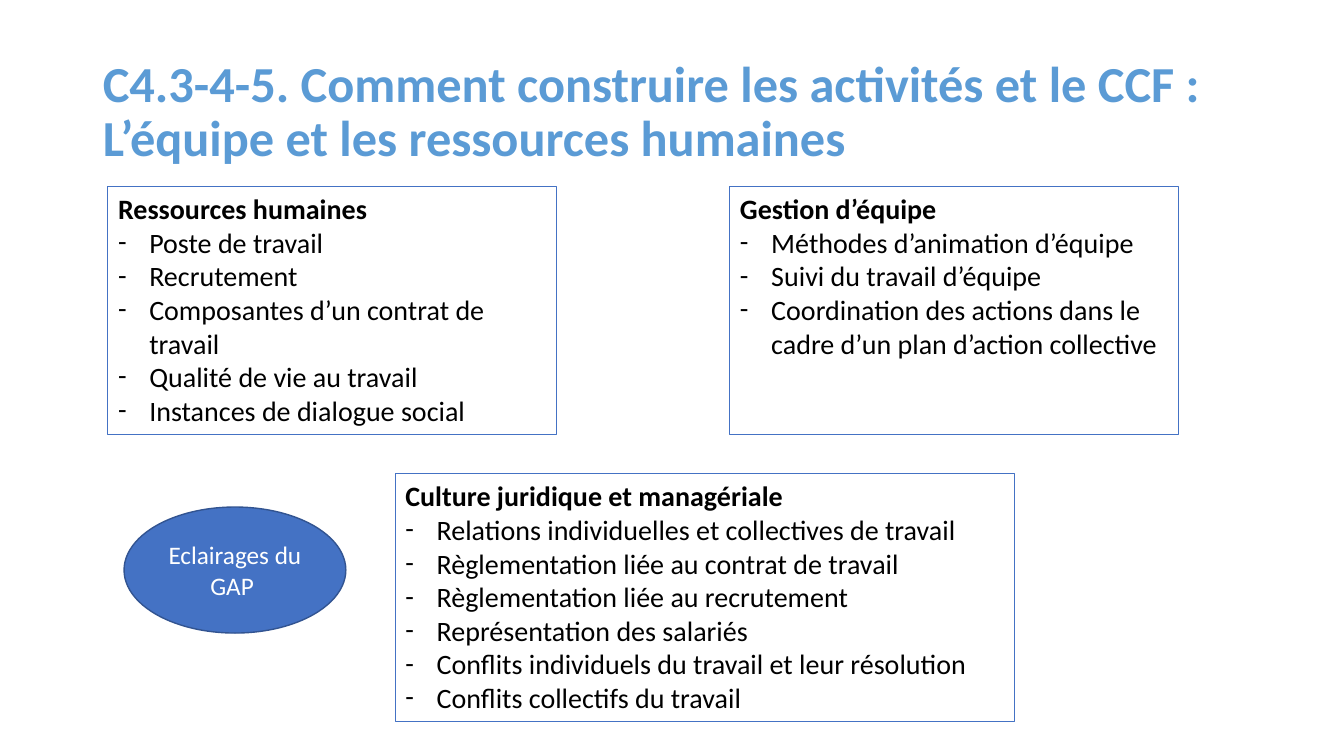
from typing import NamedTuple

import pptx
import pptx.dml.color
import pptx.enum.shapes
import pptx.enum.text
import pptx.oxml.xmlchemy
import pptx.util
from lxml import etree
from pptx.oxml import ns

WIDE = pptx.util.Inches(13.33)
HIGH = pptx.util.Inches(7.5)
FONT = "Calibri"
BLUE = "4472C4"
DASH = pptx.util.Inches(0.31)
ANCHOR = pptx.enum.text.MSO_ANCHOR
ALIGN = pptx.enum.text.PP_ALIGN
FIT = pptx.enum.text.MSO_AUTO_SIZE


class Area(NamedTuple):
    """Left, top, width and height in percent of the slide's size."""
    left: float
    top: float
    width: float
    height: float


class Card(NamedTuple):
    area: Area
    head: str
    items: tuple[str, ...]


UPPER, LOWER, TALL = 24.67, 62.67, 32.8
HALF = 33.38
CARDS = (
    Card(Area(8.03, UPPER, HALF, TALL), "Ressources humaines", (
        "Poste de travail",
        "Recrutement",
        "Composantes d’un contrat de travail",
        "Qualité de vie au travail",
        "Instances de dialogue social",
    )),
    Card(Area(54.31, UPPER, HALF, TALL), "Gestion d’équipe", (
        "Méthodes d’animation d’équipe",
        "Suivi du travail d’équipe",
        "Coordination des actions dans le cadre d’un plan d’action collective",
    )),
    Card(Area(29.41, LOWER, 46.06, TALL), "Culture juridique et managériale", (
        "Relations individuelles et collectives de travail",
        "Règlementation liée au contrat de travail",
        "Règlementation liée au recrutement",
        "Représentation des salariés",
        "Conflits individuels du travail et leur résolution",
        "Conflits collectifs du travail",
    )),
)


def paint(color, code: str) -> None:
    color.rgb = pptx.dml.color.RGBColor.from_string(code)


def scale(area: Area) -> tuple[int, int, int, int]:
    return (int(area.left * WIDE / 100), int(area.top * HIGH / 100),
            int(area.width * WIDE / 100), int(area.height * HIGH / 100))


def place(shape, area: Area) -> None:
    shape.left, shape.top, shape.width, shape.height = scale(area)


def style(para, size: int, code: str, bold: bool = False) -> None:
    para.font.name = FONT
    para.font.size = pptx.util.Pt(size)
    para.font.bold = bold
    paint(para.font.color, code)


def edge(shape, code: str, width: float) -> None:
    shape.line.width = pptx.util.Pt(width)
    paint(shape.line.color, code)


def mark(para, dash: bool) -> None:
    """Give the paragraph a hanging dash, or no bullet and no indent."""
    props = para._p.get_or_add_pPr()
    props.set("marL", str(DASH if dash else 0))
    props.set("indent", str(-DASH if dash else 0))
    if dash:
        etree.SubElement(props, ns.qn("a:buFont"), typeface=FONT)
        etree.SubElement(props, ns.qn("a:buChar"), char="-")
    else:
        etree.SubElement(props, ns.qn("a:buNone"))


def draw_title(title) -> None:
    place(title, Area(6.9, 5.33, 86.27, 19.33))
    frame = title.text_frame
    frame.text = ("C4.3-4-5. Comment construire les activités et le CCF : "
                  "L’équipe et les ressources humaines")
    frame.auto_size = FIT.NONE
    frame.vertical_anchor = ANCHOR.MIDDLE
    para = frame.paragraphs[0]
    para.alignment = ALIGN.LEFT
    para.line_spacing = 0.9
    style(para, 36, "5B9BD5", True)


def draw_card(body, card: Card) -> None:
    place(body, card.area)
    edge(body, BLUE, 0.75)
    frame = body.text_frame
    frame.text = "\n".join((card.head, *card.items))
    frame.auto_size = FIT.NONE
    frame.vertical_anchor = ANCHOR.TOP
    for row, para in enumerate(frame.paragraphs):
        para.space_before = pptx.util.Pt(0)
        mark(para, row > 0)
        style(para, 20, "000000", row == 0)


def draw_badge(slide) -> None:
    kind = pptx.enum.shapes.MSO_SHAPE.OVAL
    badge = slide.shapes.add_shape(kind, *scale(Area(9.23, 67.07, 16.5, 16.67)))
    badge.shadow.inherit = False
    badge.fill.solid()
    paint(badge.fill.fore_color, BLUE)
    edge(badge, "325491", 1)
    frame = badge.text_frame
    frame.text = "Eclairages du GAP "
    frame.vertical_anchor = ANCHOR.MIDDLE
    para = frame.paragraphs[0]
    para.alignment = ALIGN.CENTER
    style(para, 18, "FFFFFF")


def main() -> None:
    deck = pptx.Presentation()
    deck.slide_width, deck.slide_height = WIDE, HIGH
    slide = deck.slides.add_slide(deck.slide_layouts.get_by_name("Comparison"))
    title, *bodies = slide.placeholders
    draw_title(title)
    for body, card in zip(bodies, CARDS):
        draw_card(body, card)
    for spare in bodies[len(CARDS):]:
        spare.element.getparent().remove(spare.element)
    draw_badge(slide)
    deck.save("out.pptx")


if __name__ == "__main__":
    main()
